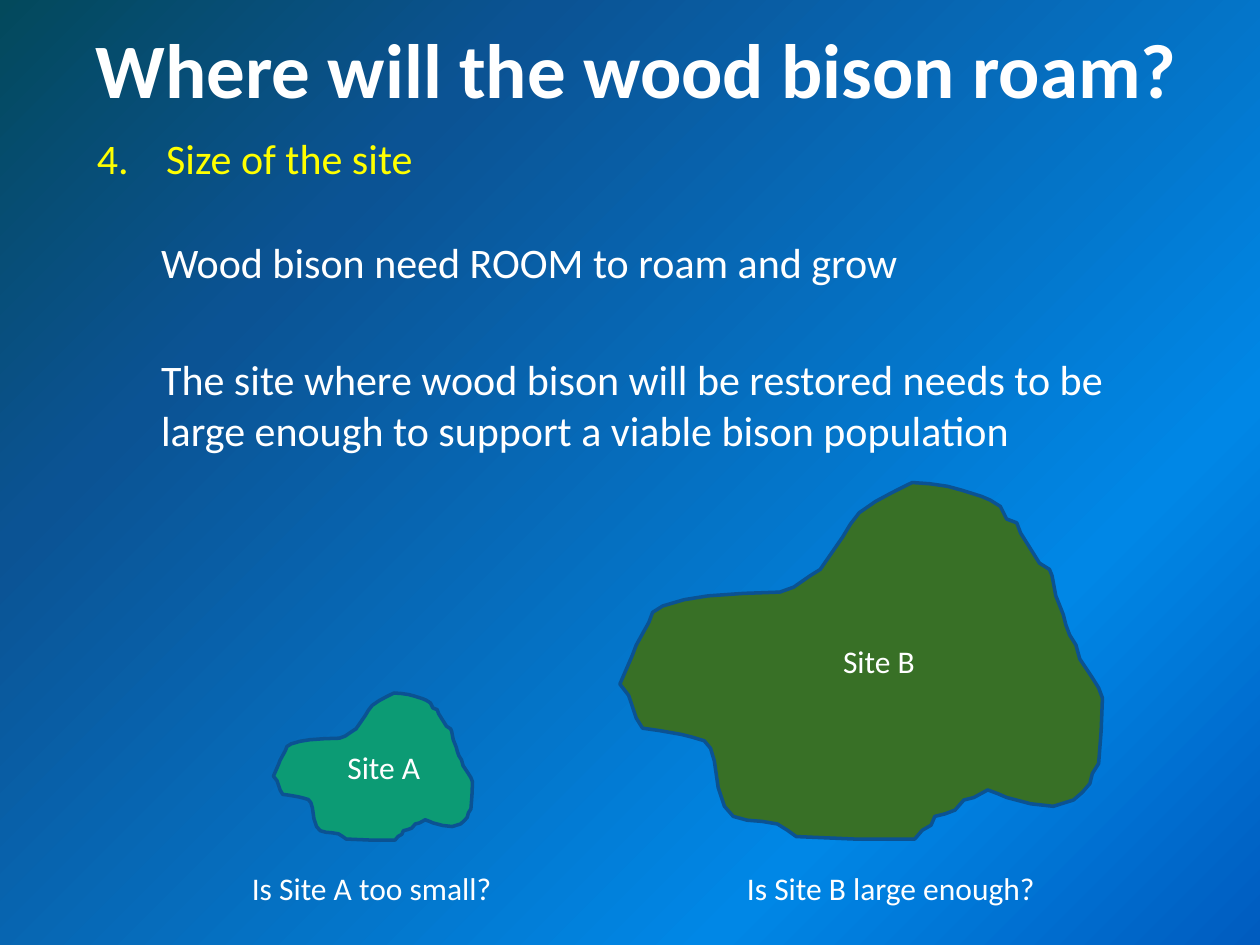
from pptx import Presentation
from pptx.dml.color import RGBColor
from pptx.enum.text import MSO_ANCHOR as Anchor, PP_ALIGN as Align
from pptx.oxml import parse_xml
from pptx.oxml.ns import nsdecls
from pptx.util import Inches, Pt

WHITE = RGBColor(0xFF, 0xFF, 0xFF)
YELLOW = RGBColor(0xFF, 0xFF, 0x00)
TEAL = RGBColor(0x0C, 0x9B, 0x74)
GREEN = RGBColor(0x38, 0x70, 0x26)
NAVY = RGBColor(0x0B, 0x52, 0x92)
STOPS = [(0, RGBColor(0x03, 0x49, 0x5C)), (25, RGBColor(0x0B, 0x53, 0x94)),
         (75, RGBColor(0x00, 0x87, 0xE6)), (100, RGBColor(0x00, 0x5C, 0xBF))]

# Site outline in inches, clockwise from its western tip
OUTLINE = [
    (4.92, 5.43), (5.02, 5.20), (5.05, 5.12), (5.10, 5.03), (5.15, 4.94),
    (5.18, 4.86), (5.26, 4.81), (5.43, 4.76), (5.62, 4.73), (5.90, 4.71),
    (6.19, 4.70), (6.30, 4.66), (6.43, 4.57), (6.51, 4.52), (6.60, 4.39),
    (6.69, 4.26), (6.75, 4.16), (6.82, 4.07), (6.95, 3.98), (7.08, 3.91),
    (7.16, 3.87), (7.24, 3.83), (7.38, 3.84), (7.52, 3.86), (7.63, 3.89),
    (7.79, 3.94), (7.86, 3.97), (7.94, 4.02), (7.99, 4.12), (8.07, 4.15),
    (8.10, 4.23), (8.20, 4.39), (8.25, 4.47), (8.33, 4.52), (8.35, 4.57),
    (8.38, 4.73), (8.44, 4.88), (8.46, 4.96), (8.49, 5.04), (8.54, 5.12),
    (8.57, 5.23), (8.67, 5.38), (8.72, 5.46), (8.75, 5.54), (8.74, 5.80),
    (8.72, 6.06), (8.67, 6.14), (8.65, 6.22), (8.59, 6.29), (8.52, 6.35),
    (8.36, 6.40), (8.18, 6.38), (7.99, 6.33), (7.92, 6.30), (7.84, 6.27),
    (7.73, 6.33), (7.65, 6.35), (7.58, 6.43), (7.50, 6.46), (7.42, 6.48),
    (7.39, 6.55), (7.32, 6.59), (7.26, 6.66), (6.79, 6.66), (6.32, 6.64),
    (6.25, 6.59), (6.17, 6.54), (6.05, 6.52), (5.93, 6.51), (5.82, 6.48),
    (5.75, 6.40), (5.70, 6.25), (5.67, 6.04), (5.64, 5.94), (5.59, 5.88),
    (5.49, 5.85), (5.41, 5.83), (5.24, 5.80), (5.10, 5.78), (5.05, 5.70),
    (4.99, 5.52)]
WEST, NORTH = 4.92, 3.83


def style(para, size, color, bold=None):
    for run in para.runs:
        font = run.font
        font.name, font.size, font.bold = "Calibri", Pt(size), bold
        font.color.rgb = color


prs = Presentation()
prs.slide_width, prs.slide_height = Inches(10), Inches(7.5)
slide = prs.slides.add_slide(prs.slide_layouts[6])

# Diagonal background gradient
marks = "".join(f'<a:gs pos="{pos * 1000}"><a:srgbClr val="{color}"/></a:gs>'
                for pos, color in STOPS)
slide.element.cSld.insert(0, parse_xml(
    f'<p:bg {nsdecls("p", "a")}><p:bgPr><a:gradFill rotWithShape="1">'
    f'<a:gsLst>{marks}</a:gsLst><a:lin ang="2700000" scaled="0"/></a:gradFill>'
    '<a:effectLst/></p:bgPr></p:bg>'))

# Sites: one outline at two scales; the inset nudges the label right
for name, left, top, scale, fill, inset in [
        ("Site A", 2.17, 5.5, 1.58 / 3.83, TEAL, 0.17),
        ("Site B", WEST, NORTH, 1, GREEN, 0.28)]:
    pts = [(Inches(left + (x - WEST) * scale), Inches(top + (y - NORTH) * scale))
           for x, y in OUTLINE]
    build = slide.shapes.build_freeform(*pts[0])
    build.add_line_segments(pts[1:], close=True)
    site = build.convert_to_shape()
    site.shadow.inherit = False
    site.fill.solid()
    site.fill.fore_color.rgb = fill
    site.line.color.rgb = NAVY
    site.line.width = Pt(2)
    frame = site.text_frame
    frame.text = name
    frame.vertical_anchor = Anchor.MIDDLE
    frame.margin_left = Inches(0.1 + inset)
    frame.paragraphs[0].alignment = Align.CENTER
    style(frame.paragraphs[0], 18, WHITE)

# Title, point, statements and captions
for text, left, top, width, height, size, color, wrap in [
        ("Where will the wood bison roam?", 0.66, 0.12, 8.87, 0.84, 44, WHITE, False),
        ("4.\tSize of the site", 0.67, 1, 9.92, 0.5, 24, YELLOW, True),
        ("Wood bison need ROOM to roam and grow",
         1.18, 1.83, 9.92, 0.5, 24, WHITE, True),
        ("The site where wood bison will be restored needs to be\n"
         "large enough to support a viable bison population",
         1.18, 2.76, 9.92, 0.91, 24, WHITE, True),
        ("Is Site A too small?", 1.9, 6.85, 2.18, 0.4, 18, WHITE, False),
        ("Is Site B large enough?", 5.83, 6.85, 2.52, 0.4, 18, WHITE, True)]:
    box = slide.shapes.add_textbox(Inches(left), Inches(top), Inches(width), Inches(height))
    frame = box.text_frame
    frame.word_wrap = wrap
    frame.text = text
    for para in frame.paragraphs:
        style(para, size, color, bold=size == 44)
        if "\t" in text:  # hanging number
            props = para._p.get_or_add_pPr()
            props.set("marL", str(Inches(0.55)))
            props.set("indent", str(-Inches(0.55)))

prs.save("out.pptx")
